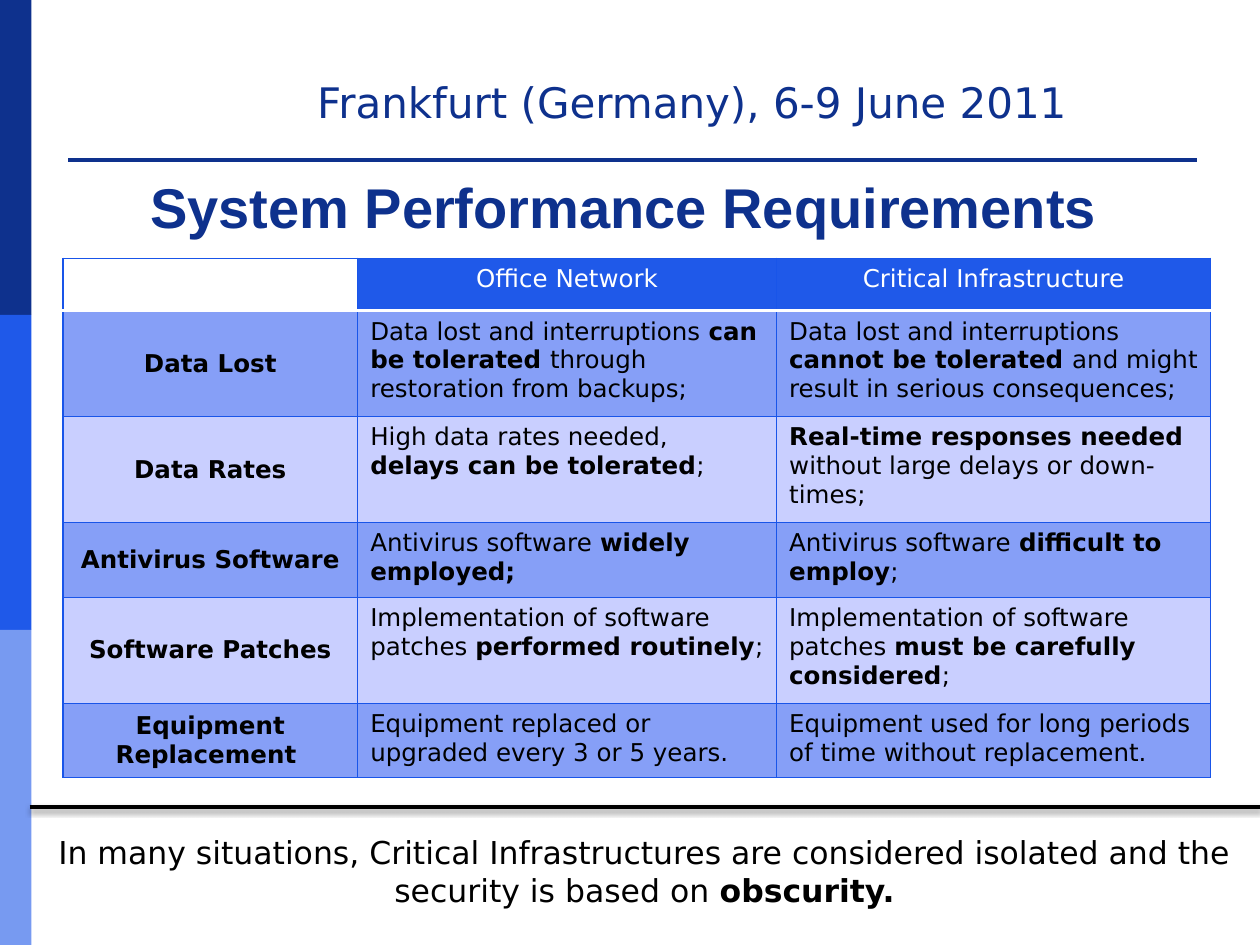
from lxml.etree import SubElement
from pptx import Presentation
from pptx.dml.color import RGBColor
from pptx.enum.shapes import MSO_CONNECTOR, MSO_SHAPE
from pptx.enum.text import MSO_ANCHOR, PP_ALIGN
from pptx.oxml.ns import qn
from pptx.util import Pt

NAVY, BLUE, SKY = "0E318D", "1F59E9", "779AF1"
GRID, BAND, PALE = "1955E9", "869FF7", "C9CFFF"
BLACK, WHITE = "000000", "FFFFFF"

HEADINGS = ["", "Office Network", "Critical Infrastructure"]
REQUIREMENTS = [
    ["**Data Lost**",
     "Data lost and interruptions **can be tolerated **through restoration from backups;",
     "Data lost and interruptions **cannot be tolerated **and might result in serious consequences;"],
    ["**Data Rates**",
     "High data rates needed, **delays can be tolerated**;",
     "**Real-time responses needed **without large delays or down-times;"],
    ["**Antivirus Software**",
     "Antivirus software **widely employed;**",
     "Antivirus software **difficult to employ**;"],
    ["**Software Patches**",
     "Implementation of software patches **performed routinely**;",
     "Implementation of software patches **must be carefully considered**;"],
    ["**Equipment Replacement **",
     "Equipment replaced or upgraded every 3 or 5 years.",
     "Equipment used for long periods of time without replacement."],
]


def colour(hex_string):
    return RGBColor.from_string(hex_string)


def write(frame, text, size=14, font="DejaVu Sans", ink=BLACK, align=PP_ALIGN.LEFT):
    paragraph = frame.paragraphs[0]
    paragraph.alignment = align
    for index, part in enumerate(text.split("**")):
        if part:
            run = paragraph.add_run()
            run.text = part
            run.font.size = Pt(size)
            run.font.name = font
            run.font.bold = index % 2 == 1
            run.font.color.rgb = colour(ink)


def set_border(cell, side, ink, width):
    line = SubElement(cell._tc.get_or_add_tcPr(), qn(f"a:ln{side}"), w=str(Pt(width)))
    fill = SubElement(line, qn("a:solidFill"))
    SubElement(fill, qn("a:srgbClr"), val=ink)


class SlideBuilder:
    def __init__(self, slide):
        self.slide = slide

    def bar(self, left, top, width, height, fill):
        shape = self.slide.shapes.add_shape(
            MSO_SHAPE.RECTANGLE, Pt(left), Pt(top), Pt(width), Pt(height))
        shape.shadow.inherit = False
        shape.fill.solid()
        shape.fill.fore_color.rgb = colour(fill)
        shape.line.fill.background()

    def shadowed_rule(self, left, right, y, ink, width):
        line = self.slide.shapes.add_connector(
            MSO_CONNECTOR.STRAIGHT, Pt(left), Pt(y), Pt(right), Pt(y))
        line.line.color.rgb = colour(ink)
        line.line.width = Pt(width)
        effects = SubElement(line._element.spPr, qn("a:effectLst"))
        outer = SubElement(effects, qn("a:outerShdw"), blurRad=str(Pt(3.1)),
                           dist=str(Pt(1.6)), dir="5400000", rotWithShape="0")
        tint = SubElement(outer, qn("a:srgbClr"), val=BLACK)
        SubElement(tint, qn("a:alpha"), val="38000")

    def text(self, left, top, width, height, text, anchor=MSO_ANCHOR.TOP, **style):
        frame = self.slide.shapes.add_textbox(
            Pt(left), Pt(top), Pt(width), Pt(height)).text_frame
        frame.word_wrap = True
        frame.vertical_anchor = anchor
        write(frame, text, **style)

    def grid(self, left, top, widths, heights):
        table = self.slide.shapes.add_table(
            len(heights), len(widths), Pt(left), Pt(top),
            Pt(sum(widths)), Pt(sum(heights))).table
        table.first_row = table.horz_banding = False
        for column, width in zip(table.columns, widths):
            column.width = Pt(width)
        for row, height in zip(table.rows, heights):
            row.height = Pt(height)
        return table

    def underline(self, left, top, width, height, ink, weight):
        cell = self.grid(left, top, [width], [height]).cell(0, 0)
        cell.margin_top = cell.margin_bottom = 0
        SubElement(cell.text_frame.paragraphs[0]._p, qn("a:endParaRPr"), sz="800")
        for side in "LRT":
            hidden = SubElement(cell._tc.get_or_add_tcPr(), qn(f"a:ln{side}"))
            SubElement(hidden, qn("a:noFill"))
        set_border(cell, "B", ink, weight)
        cell.fill.background()

    def table(self, left, top, widths, heights, rows):
        table = self.grid(left, top, widths, heights)
        for r, row in enumerate(rows):
            for c, content in enumerate(row):
                self.cell(table.cell(r, c), r, c, content)

    def cell(self, cell, r, c, content):
        header, label = r == 0, c == 0
        for side in "LRTB":
            under_header = (header and side == "B") or (r == 1 and side == "T")
            set_border(cell, side, *((WHITE, 2) if under_header else (GRID, 0.75)))
        cell.fill.solid()
        if header:
            fill = WHITE if label else BLUE
        else:
            fill = BAND if r % 2 else PALE
        cell.fill.fore_color.rgb = colour(fill)
        if label and not header:
            cell.vertical_anchor = MSO_ANCHOR.MIDDLE
        write(cell.text_frame, content, ink=WHITE if header else BLACK,
              align=PP_ALIGN.CENTER if header or label else PP_ALIGN.LEFT)


def main():
    deck = Presentation()
    deck.slide_width, deck.slide_height = Pt(720), Pt(540)
    page = SlideBuilder(deck.slides.add_slide(deck.slide_layouts[6]))

    for index, fill in enumerate([NAVY, BLUE, SKY]):
        page.bar(0, 180 * index, 18, 180, fill)
    page.underline(38.9, 77, 645.3, 14.4, NAVY, 2.25)
    page.text(174.2, 40.3, 473.8, 36, "Frankfurt (Germany), 6-9 June 2011",
              size=24, ink=NAVY)
    page.text(32.4, 94.3, 648, 46.8, "**System Performance Requirements**",
              anchor=MSO_ANCHOR.MIDDLE, size=32, font="Arial", ink=NAVY,
              align=PP_ALIGN.CENTER)
    page.table(36, 147.5, [168.4, 239.4, 248.1],
               [30.2, 60.5, 60.5, 42.7, 60.5, 42.7], [HEADINGS] + REQUIREMENTS)
    page.text(16.6, 466.6, 703.4, 61.9,
              "In many situations, Critical Infrastructures are considered isolated "
              "and the security is based on **obscurity.**",
              anchor=MSO_ANCHOR.MIDDLE, size=18, align=PP_ALIGN.CENTER)
    page.shadowed_rule(17, 720, 461.3, BLACK, 2)
    deck.save("out.pptx")


if __name__ == "__main__":
    main()
